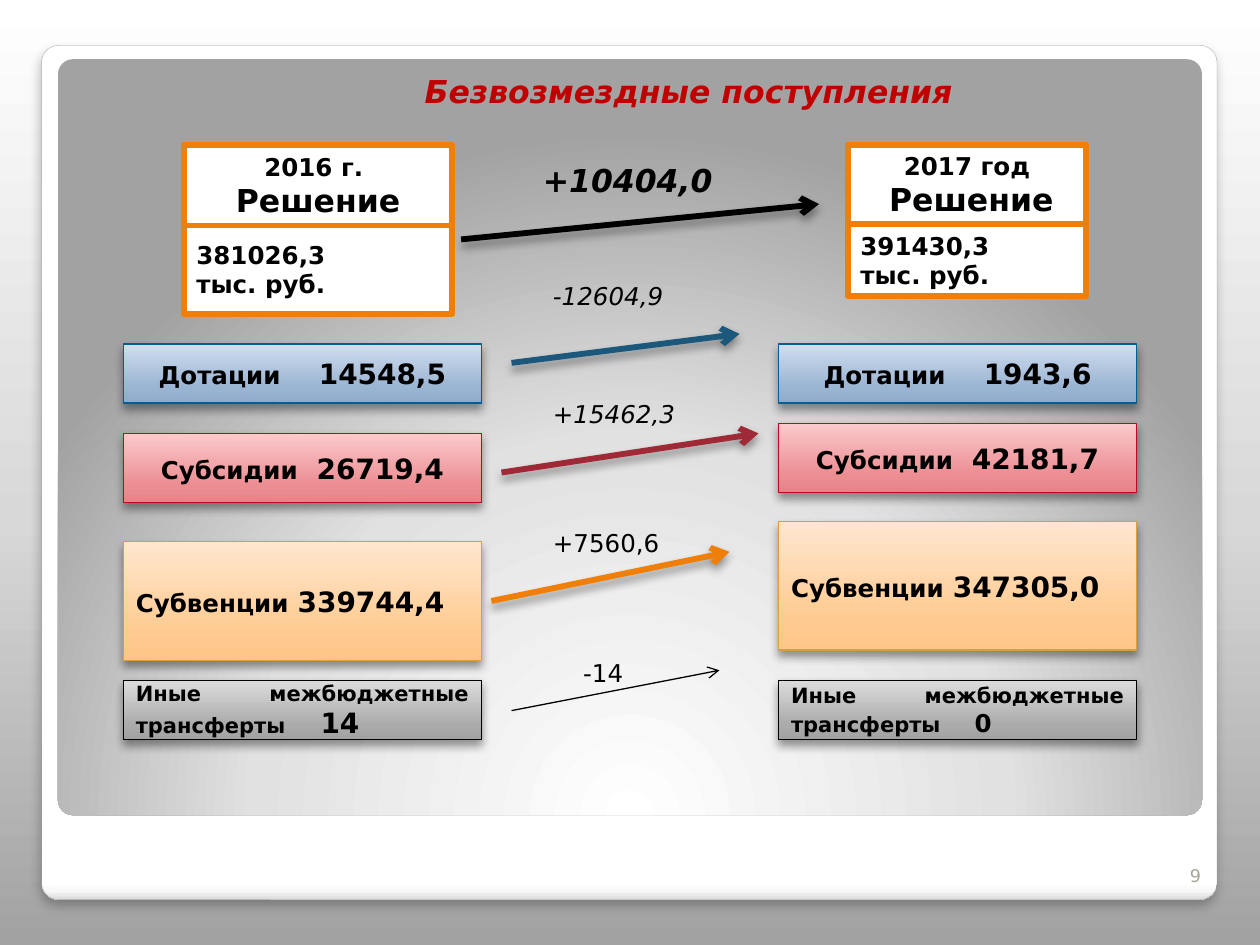
from dataclasses import dataclass

from lxml import etree
from pptx import Presentation
from pptx import util as u
from pptx.dml.color import RGBColor
from pptx.enum import shapes, text
from pptx.oxml.ns import qn

COLS, ROWS = 100, 75
CELL = u.Inches(0.1)
FONT = "DejaVu Sans"
LEFT, CENTER, RIGHT, JUSTIFY = (
    text.PP_ALIGN.LEFT, text.PP_ALIGN.CENTER, text.PP_ALIGN.RIGHT, text.PP_ALIGN.JUSTIFY)
TOP, MIDDLE, BOTTOM = text.MSO_ANCHOR.TOP, text.MSO_ANCHOR.MIDDLE, text.MSO_ANCHOR.BOTTOM
ORANGE = "F07F09"


@dataclass(frozen=True)
class Run:
    text: str
    size: float = 14
    bold: bool = False
    italic: bool = False
    color: str = "000000"
    spacing: float = 0  # extra points after each character


@dataclass(frozen=True)
class Gradient:
    stops: tuple[tuple[int, str], ...]
    angle: int | None = 270  # None: circles around a point below the shape


@dataclass(frozen=True)
class Shadow:
    alpha: int = 40
    blur: float = 5.2
    distance: float = 3


@dataclass(frozen=True)
class Side:
    top: float
    height: float
    value: str
    size: float = 16


@dataclass(frozen=True)
class Band:
    """One kind of transfer, with its box for each year."""
    label: str
    gap: float
    fill: Gradient
    line: str
    align: text.PP_ALIGN
    sides: tuple[Side, Side]
    label_size: float = 14


@dataclass(frozen=True)
class Change:
    """A labelled arrow from the 2016 figure to the 2017 one."""
    run: Run
    label_box: tuple[float, float, float, float]
    start: tuple[float, float]
    end: tuple[float, float]
    color: str
    width: float = 3.35
    shadow: Shadow | None = Shadow()


SIDE_LEFTS = (9.8, 61.8)
BAND_WIDTH = 28.4
BANDS = (
    Band("Дотации", 16.7, Gradient(((0, "90ABCB"), (25, "99B3D2"), (100, "D1DEEE"))),
         "035E94", CENTER, (Side(27.3, 4.7, "14548,5"), Side(27.3, 4.7, "1943,6"))),
    Band("Субсидии", 5.6, Gradient(((0, "E68589"), (25, "EC8D92"), (100, "FBCACC"))),
         "BC0B1F", CENTER, (Side(34.4, 5.5, "26719,4"), Side(33.6, 5.5, "42181,7"))),
    Band("Субвенции", 0, Gradient(((0, "FFC687"), (25, "FFCB92"), (100, "FFE7CF"))),
         "DB9E3F", JUSTIFY, (Side(43, 9.4, "339744,4"), Side(41.4, 10.2, "347305,0"))),
    Band("Иные межбюджетные трансферты", 15, Gradient(((0, "A2A2A2"), (25, "ABABAB"), (100, "DCDCDC"))),
         "000000", JUSTIFY, (Side(54, 4.7, "14"), Side(54, 4.7, "0", 14)), 12),
)
CHANGES = (
    Change(Run("-12604,9", italic=True), (42.9, 21.8, 15.7, 3.4), (40.6, 28.8), (58.7, 26.5), "1B587C"),
    Change(Run("+15462,3", italic=True), (42.9, 31.2, 15.7, 3.4), (39.8, 37.5), (60.2, 34.4), "9F2936"),
    Change(Run("+7560,6"), (42.9, 41.4, 15, 3.4), (39, 47.7), (57.9, 43.8), ORANGE),
    Change(Run("-14"), (45.3, 51.7, 6.8, 3.4), (40.6, 56.4), (57.1, 53.2), "000000", 0.75, None),
    Change(Run("+10404,0", 18, True, True), (42.1, 12.3, 17.3, 4), (36.6, 19), (65, 16.2), "000000"),
)


def rgb(value: str) -> RGBColor:
    return RGBColor.from_string(value)


def grid(*cells: float) -> list[int]:
    return [round(c * CELL) for c in cells]


def add_color(parent, value: str, alpha: int = 100) -> None:
    clr = etree.SubElement(parent, qn("a:srgbClr"), val=value)
    if alpha < 100:
        etree.SubElement(clr, qn("a:alpha"), val=str(alpha * 1000))


def set_gradient(solid, gradient: Gradient) -> None:
    """Replace a solidFill element with the gradient."""
    grad = etree.Element(qn("a:gradFill"), rotWithShape="1")
    stops = etree.SubElement(grad, qn("a:gsLst"))
    for pos, color in gradient.stops:
        add_color(etree.SubElement(stops, qn("a:gs"), pos=str(pos * 1000)), color)
    if gradient.angle is None:
        circle = etree.SubElement(grad, qn("a:path"), path="circle")
        etree.SubElement(circle, qn("a:fillToRect"), l="50000", t="175000", r="50000", b="-75000")
    else:
        etree.SubElement(grad, qn("a:lin"), ang=str(gradient.angle * 60000), scaled="0")
    solid.getparent().replace(solid, grad)


def set_shadow(sp, shadow: Shadow | None) -> None:
    props = sp._element.spPr
    effects = props.find(qn("a:effectLst"))
    if effects is None:
        effects = etree.SubElement(props, qn("a:effectLst"))
    if shadow:
        outer = etree.SubElement(
            effects, qn("a:outerShdw"), blurRad=str(u.Pt(shadow.blur)),
            dist=str(u.Pt(shadow.distance)), dir="5400000", rotWithShape="0")
        add_color(outer, "000000", shadow.alpha)


def write(sp, paragraphs: list[list[Run]], align=LEFT, anchor=TOP) -> None:
    tf = sp.text_frame
    tf.word_wrap = True
    tf.vertical_anchor = anchor
    for i, runs in enumerate(paragraphs):
        p = tf.add_paragraph() if i else tf.paragraphs[0]
        p.alignment = align
        for run in runs:
            r = p.add_run()
            r.text = run.text
            r.font.name, r.font.size = FONT, u.Pt(run.size)
            r.font.bold, r.font.italic = run.bold, run.italic
            r.font.color.rgb = rgb(run.color)
            if run.spacing:
                r._r.get_or_add_rPr().set("spc", str(round(run.spacing * 100)))


def add_box(slide, box, fill: Gradient | str, line: str | None, width: float = 0.75,
            shadow: Shadow | None = None, rounding: float | None = None):
    kind = shapes.MSO_SHAPE.RECTANGLE if rounding is None else shapes.MSO_SHAPE.ROUNDED_RECTANGLE
    sp = slide.shapes.add_shape(kind, *grid(*box))
    if rounding is not None:
        sp.adjustments[0] = rounding
    sp.fill.solid()
    if isinstance(fill, Gradient):
        set_gradient(sp._element.spPr.find(qn("a:solidFill")), fill)
    else:
        sp.fill.fore_color.rgb = rgb(fill)
    if line:
        sp.line.color.rgb = rgb(line)
        sp.line.width = u.Pt(width)
    else:
        sp.line.fill.background()
    sp.shadow.inherit = False
    set_shadow(sp, shadow)
    return sp


def add_label(slide, box, run: Run, align=LEFT, anchor=TOP) -> None:
    write(slide.shapes.add_textbox(*grid(*box)), [[run]], align, anchor)


def add_band(slide, band: Band) -> None:
    for left, side in zip(SIDE_LEFTS, band.sides):
        sp = add_box(slide, (left, side.top, BAND_WIDTH, side.height), band.fill, band.line, shadow=Shadow())
        write(sp, [[Run(band.label, band.label_size, True), Run(" ", side.size, spacing=band.gap),
                    Run(side.value, side.size, True)]], band.align, MIDDLE)


def add_year(slide, left: float, width: float, heights: tuple[float, float], heading: list[list[Run]],
             total: str) -> None:
    head_height, total_height = heights
    sums = add_box(slide, (left, 17.8, width, total_height), "FFFFFF", ORANGE, 3.35)
    write(sums, [[Run(total, bold=True)], [Run("тыс. руб.", bold=True)]], anchor=MIDDLE)
    head = add_box(slide, (left, 11.5, width, head_height), "FFFFFF", ORANGE, 3.35)
    write(head, heading, CENTER, MIDDLE)


def add_change(slide, change: Change) -> None:
    ln = slide.shapes.add_connector(shapes.MSO_CONNECTOR.STRAIGHT, *grid(*change.start, *change.end))
    ln.line.color.rgb = rgb(change.color)
    ln.line.width = u.Pt(change.width)
    etree.SubElement(ln.line._get_or_add_ln(), qn("a:tailEnd"), type="arrow")
    set_shadow(ln, change.shadow)
    add_label(slide, change.label_box, change.run)


def main() -> None:
    prs = Presentation()
    prs.slide_width, prs.slide_height = COLS * CELL, ROWS * CELL
    slide = prs.slides.add_slide(prs.slide_layouts[5])
    slide.background.fill.solid()
    set_gradient(slide._element.find(".//" + qn("p:bgPr")).find(qn("a:solidFill")),
                 Gradient(((0, "A2A2A2"), (45, "D8D8D8"), (100, "FFFFFF"))))

    add_box(slide, (3.3, 3.6, 93.3, 67.8),
            Gradient(((0, "FFFFFF"), (98, "FFFFFF"), (99, "F7F7F7"), (100, "DADADA")), 90),
            "A4A4A4", 0.16, Shadow(25, 6, 4), 0.02)
    add_box(slide, (4.6, 4.7, 90.8, 60),
            Gradient(((0, "FFFFFF"), (55, "E1E1E1"), (100, "A2A2A2")), None), None, rounding=0.02)
    add_label(slide, (91.3, 66.8, 5, 4), Run("9", 10, color="A8A49B"), RIGHT, BOTTOM)

    for band in BANDS:
        add_band(slide, band)
    decision = Run("Решение", 18, True)
    add_year(slide, 14.6, 21.3, (6.4, 7.1), [[Run("2016 г. ", bold=True)], [decision]], "381026,3")
    add_year(slide, 67.3, 18.9, (6.3, 5.7),
             [[Run("2017 год", bold=True)], [Run(" ", bold=True), decision]], "391430,3")
    for change in CHANGES:
        add_change(slide, change)

    title = slide.shapes.title
    title.left, title.top, title.width, title.height = grid(32.7, 5.2, 55.1, 4)
    write(title, [[Run("Безвозмездные поступления", 18, True, True, "C00000")]])
    slide.shapes._spTree.append(title._element)  # bring in front of the panels
    prs.save("out.pptx")


if __name__ == "__main__":
    main()
